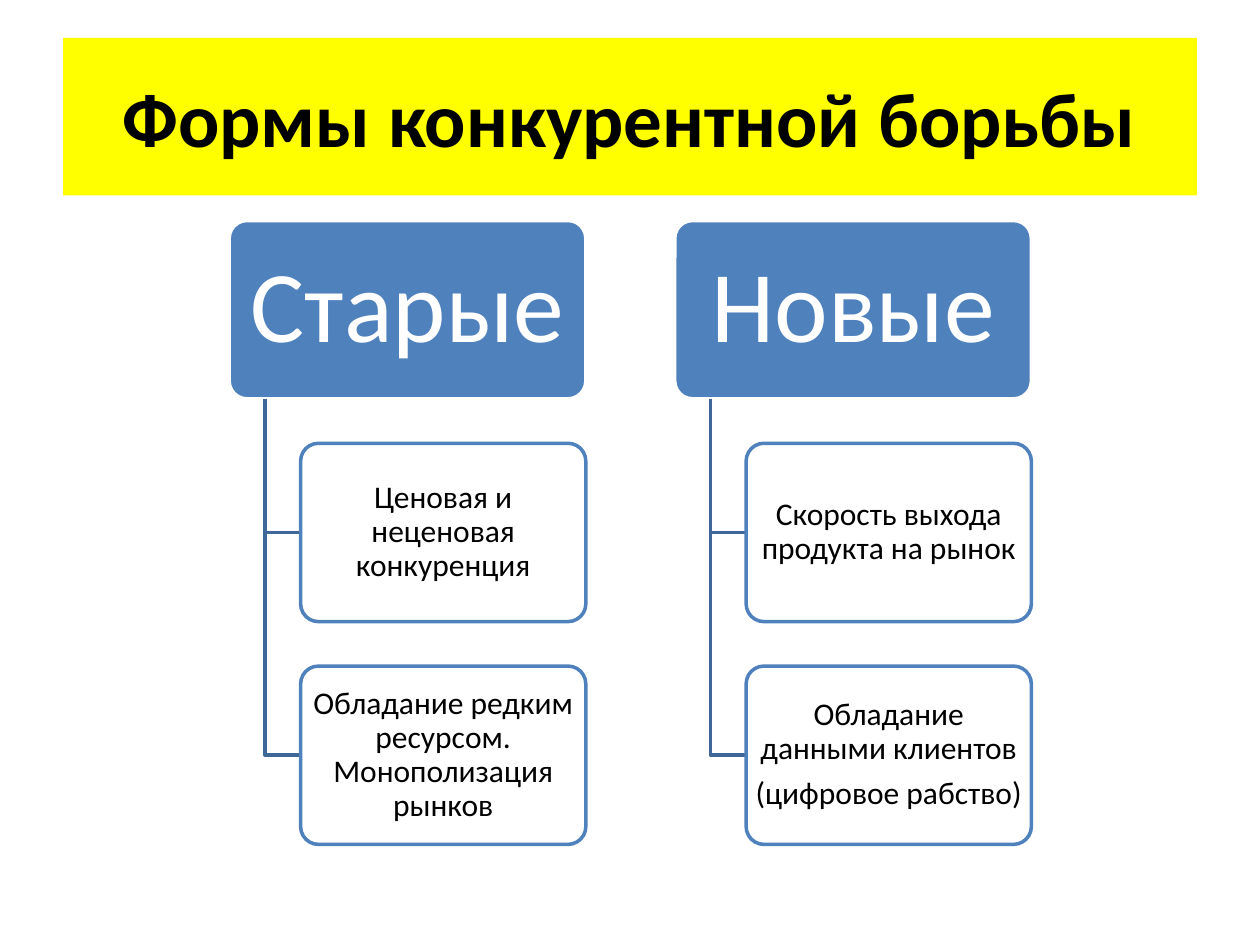
"""Build a slide comparing old and new forms of competition as two hierarchy columns."""
from lxml import etree
from pptx import Presentation
from pptx.dml.color import RGBColor
from pptx.enum.shapes import MSO_SHAPE
from pptx.enum.text import MSO_ANCHOR, PP_ALIGN
from pptx.oxml.ns import qn
from pptx.util import Pt

ROUNDED = MSO_SHAPE.ROUNDED_RECTANGLE
CENTER = PP_ALIGN.CENTER
MIDDLE = MSO_ANCHOR.MIDDLE
FONT = "Calibri"
COLORS = {
    "title_fill": "FFFF00",
    "header": "4F81BD",
    "branch": "3F6797",
    "white": "FFFFFF",
    "black": "000000",
}
COLUMNS = [
    ("Старые", [
        ["Ценовая и неценовая конкуренция"],
        ["Обладание редким ресурсом. Монополизация рынков"],
    ]),
    ("Новые", [
        ["Скорость выхода продукта на рынок"],
        ["Обладание данными клиентов", "(цифровое рабство)"],
    ]),
]
LEFT, TOP = 131, 126
HEADER_WIDTH, ITEM_WIDTH, BOX_HEIGHT = 203.8, 163, 101.9
COLUMN_PITCH, ROW_PITCH = 254.6, 127.3
TRUNK_INDENT, ITEM_INDENT = 20.4, 40.8


def rgb(name):
    return RGBColor.from_string(COLORS[name])


def add_box(slide, left, top, width, lines, size, fill, line, color, margins):
    box = slide.shapes.add_shape(ROUNDED, Pt(left), Pt(top), Pt(width), Pt(BOX_HEIGHT))
    box.shadow.inherit = False
    box.adjustments[0] = 0.1
    box.fill.solid()
    box.fill.fore_color.rgb = rgb(fill)
    box.line.color.rgb = rgb(line)
    box.line.width = Pt(2)
    frame = box.text_frame
    frame.word_wrap = True
    frame.vertical_anchor = MIDDLE
    frame.margin_left = frame.margin_right = Pt(margins[0])
    frame.margin_top = frame.margin_bottom = Pt(margins[1])
    frame.text = "\n".join(lines)
    for paragraph in frame.paragraphs:
        paragraph.alignment = CENTER
        paragraph.line_spacing = 0.9
        paragraph.space_after = Pt(6.3)
        paragraph.font.name = FONT
        paragraph.font.size = Pt(size)
        paragraph.font.color.rgb = rgb(color)
    return box


presentation = Presentation()
presentation.slide_width, presentation.slide_height = Pt(720), Pt(540)
slide = presentation.slides.add_slide(presentation.slide_layouts[5])

title = slide.shapes.title
title.left, title.top, title.width, title.height = Pt(36), Pt(21.6), Pt(648), Pt(90)
title.fill.solid()
title.fill.fore_color.rgb = rgb("title_fill")
title.text_frame.text = "Формы конкурентной борьбы"
title.text_frame.vertical_anchor = MIDDLE
heading = title.text_frame.paragraphs[0]
heading.alignment = CENTER
heading.font.name = FONT
heading.font.size = Pt(44)
heading.font.bold = True
heading.font.color.rgb = rgb("black")

for column, (header, items) in enumerate(COLUMNS):
    left = LEFT + column * COLUMN_PITCH
    trunk, item_left = left + TRUNK_INDENT, left + ITEM_INDENT
    trunk_top = TOP + BOX_HEIGHT
    add_box(slide, left, TOP, HEADER_WIDTH, [header], 58,
            "header", "white", "white", (5, 3))
    for row, lines in enumerate(items, start=1):
        item_top = TOP + row * ROW_PITCH
        item_middle = item_top + BOX_HEIGHT / 2
        builder = slide.shapes.build_freeform(Pt(trunk), Pt(trunk_top))
        builder.add_line_segments(
            [(Pt(trunk), Pt(item_middle)), (Pt(item_left), Pt(item_middle))], close=False)
        branch = builder.convert_to_shape()
        branch.shadow.inherit = False
        branch.fill.background()
        branch.line.color.rgb = rgb("branch")
        branch.line.width = Pt(2)
        item = add_box(slide, item_left, item_top, ITEM_WIDTH, lines, 18,
                       "white", "header", "black", (0, 0))
        fill_color = item.fill._xPr.find(qn("a:solidFill"))[0]
        etree.SubElement(fill_color, qn("a:alpha")).set("val", "90000")

presentation.save("out.pptx")
